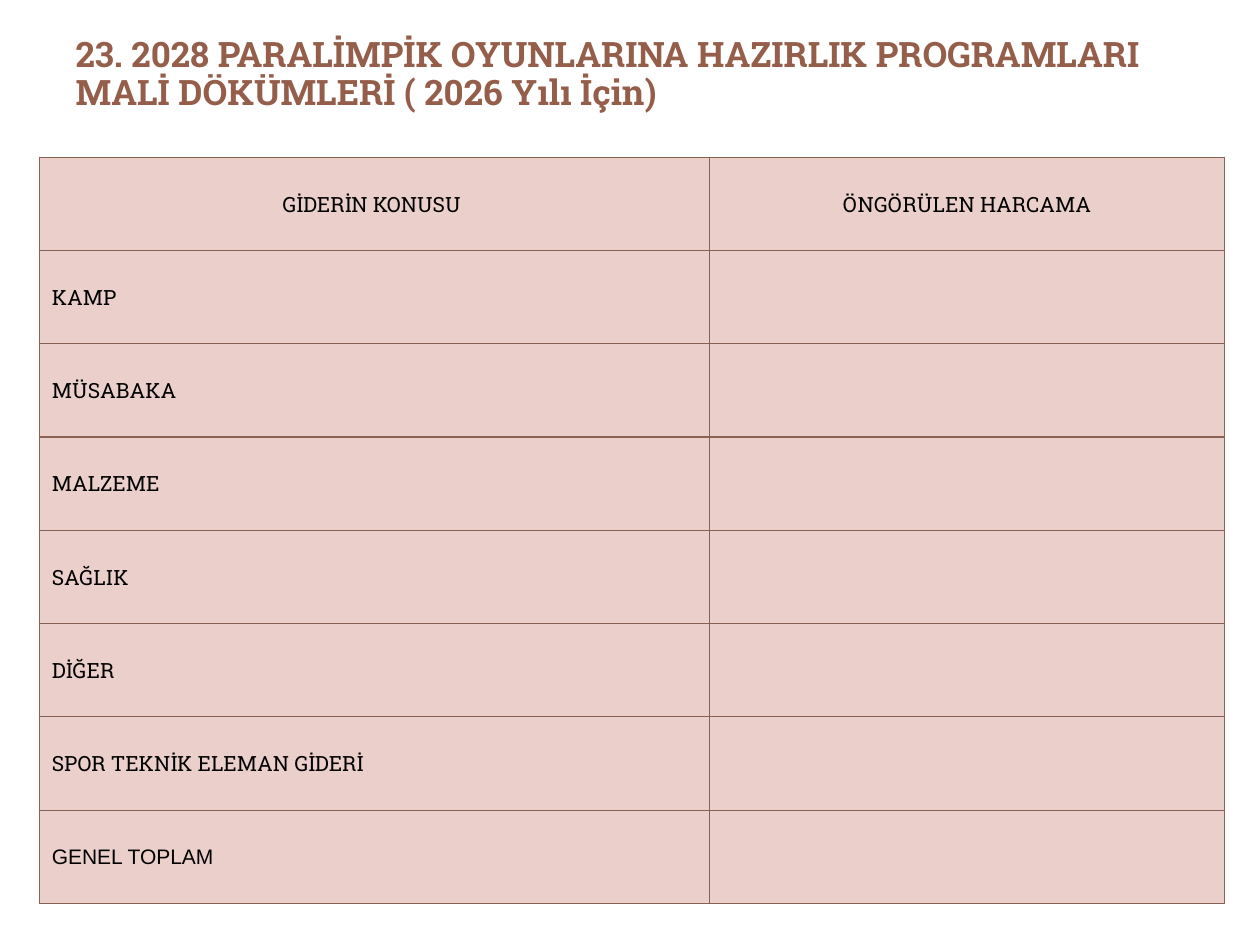
"""Build a slide with the budget table for the 2028 Paralympic preparation programmes."""
import lxml.etree
import pptx
import pptx.dml.color
import pptx.enum.text
import pptx.oxml.ns
import pptx.util
from pptx.util import Cm, Pt

BROWN = pptx.dml.color.RGBColor(0x95, 0x5E, 0x4B)
BORDER = pptx.dml.color.RGBColor(0x89, 0x61, 0x54)
PINK = pptx.dml.color.RGBColor(0xEA, 0xCF, 0xCB)
BLACK = pptx.dml.color.RGBColor(0, 0, 0)
SERIF, SANS = "Roboto Slab", "Arial"
LEFT, CENTER = pptx.enum.text.PP_ALIGN.LEFT, pptx.enum.text.PP_ALIGN.CENTER
MIDDLE = pptx.enum.text.MSO_ANCHOR.MIDDLE

HEADERS = ["GİDERİN KONUSU ", "ÖNGÖRÜLEN HARCAMA"]
EXPENSES = ["KAMP", "MÜSABAKA", "MALZEME", "SAĞLIK", "DİĞER", "SPOR TEKNİK ELEMAN GİDERİ"]
TOTAL = "GENEL TOPLAM"
COL_WIDTHS = [Cm(13.51), Cm(10.39)]
ROW_HEIGHT = Cm(1.88)


def write_text(tf, text, size=12, font=SERIF, color=BLACK, bold=False, align=LEFT, spacing=1.0):
    """Write one formatted paragraph into a text frame."""
    p = tf.paragraphs[0]
    p.alignment = align
    p.line_spacing = spacing
    r = p.add_run()
    r.text = text
    r.font.size = Pt(size)
    r.font.name = font
    r.font.bold = bold
    r.font.color.rgb = color


def set_borders(cell, color=BORDER, width=Pt(0.75)):
    """Draw a solid line on all four sides of a cell."""
    tc_pr = cell._tc.get_or_add_tcPr()
    qn = pptx.oxml.ns.qn
    for i, side in enumerate(("lnL", "lnR", "lnT", "lnB")):
        ln = lxml.etree.Element(qn(f"a:{side}"), w=str(int(width)))
        fill = lxml.etree.SubElement(ln, qn("a:solidFill"))
        lxml.etree.SubElement(fill, qn("a:srgbClr"), val=str(color))
        tc_pr.insert(i, ln)


def add_title(s, text):
    """Place and fill the title placeholder."""
    sp = s.shapes.title
    sp.left, sp.top, sp.width, sp.height = Cm(1.27), Cm(0.53), Cm(22.86), Cm(1.96)
    tf = sp.text_frame
    tf.word_wrap = True
    tf.auto_size = pptx.enum.text.MSO_AUTO_SIZE.NONE
    tf.vertical_anchor = MIDDLE
    write_text(tf, text, size=20, color=BROWN, bold=True, spacing=0.9)


def add_budget_table(s):
    """Add the table of expense subjects and planned spending."""
    labels = EXPENSES + [TOTAL]
    n = len(labels) + 1
    table = s.shapes.add_table(n, len(COL_WIDTHS), Cm(0.79), Cm(3.17),
                               sum(COL_WIDTHS), ROW_HEIGHT * n).table
    for col, width in zip(table.columns, COL_WIDTHS):
        col.width = width
    for row in table.rows:
        row.height = ROW_HEIGHT
    for cell in table.iter_cells():
        cell.fill.solid()
        cell.fill.fore_color.rgb = PINK
        cell.vertical_anchor = MIDDLE
        set_borders(cell)
    for j, text in enumerate(HEADERS):
        write_text(table.cell(0, j).text_frame, text, align=CENTER)
    for i, text in enumerate(labels, start=1):
        write_text(table.cell(i, 0).text_frame, text, font=SANS if text == TOTAL else SERIF)


def main():
    """Build and save the presentation."""
    prs = pptx.Presentation()
    prs.slide_width, prs.slide_height = Cm(25.4), Cm(19.05)
    s = prs.slides.add_slide(prs.slide_layouts[5])
    add_title(s, "23. 2028 PARALİMPİK OYUNLARINA HAZIRLIK PROGRAMLARI MALİ DÖKÜMLERİ ( 2026 Yılı İçin)")
    add_budget_table(s)
    prs.save("out.pptx")


if __name__ == "__main__":
    main()
